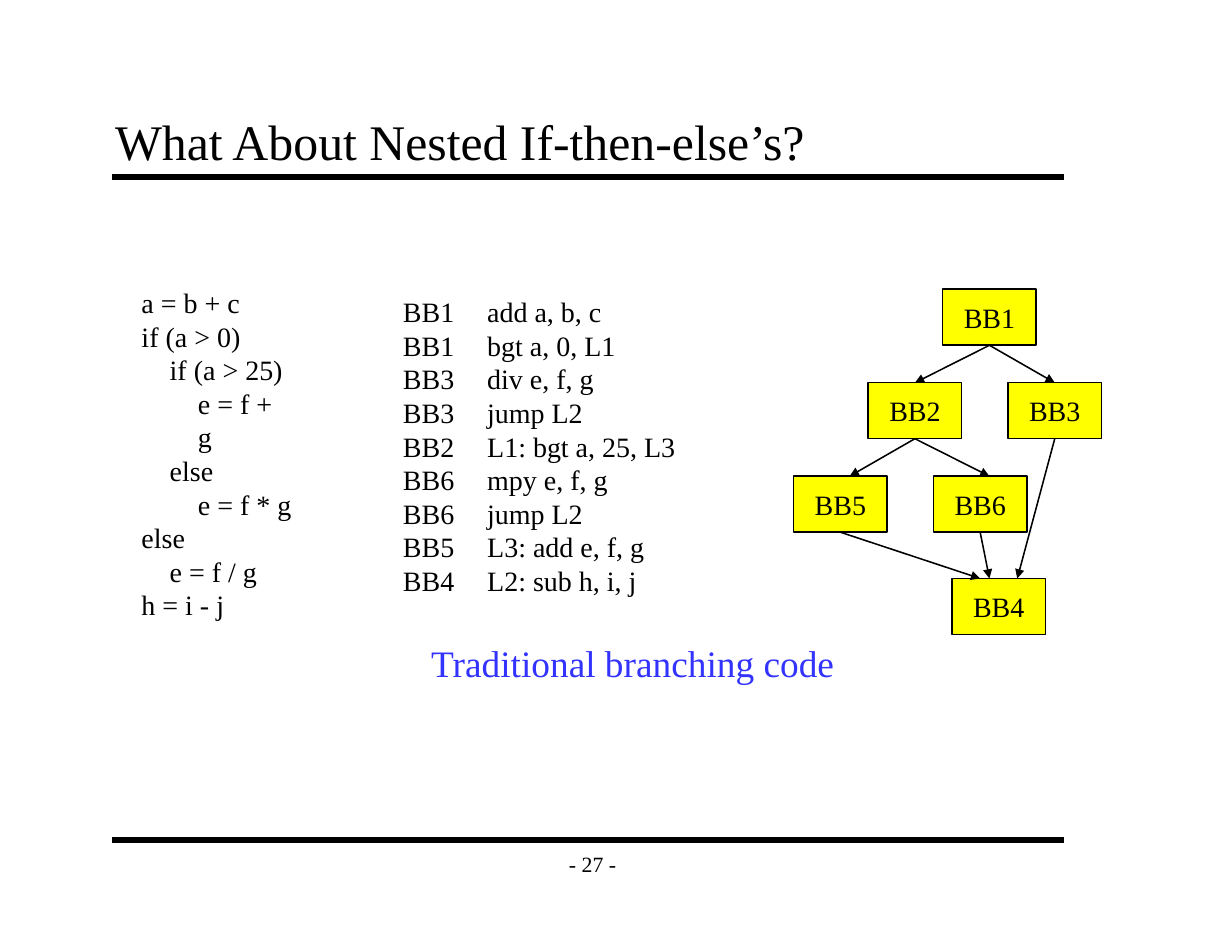
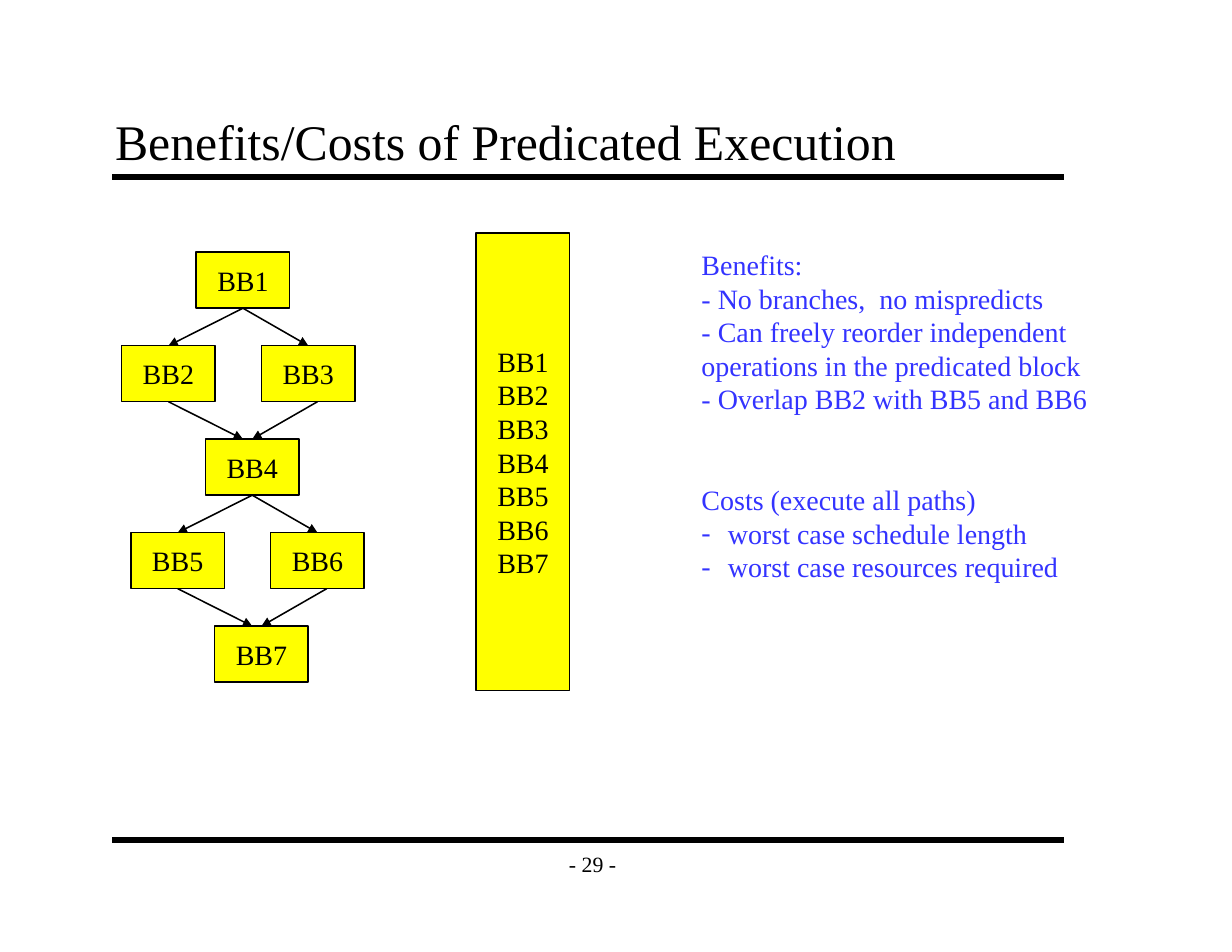
from dataclasses import dataclass

from lxml.etree import SubElement
from pptx import Presentation
from pptx.dml.color import RGBColor
from pptx.enum.shapes import MSO_CONNECTOR, MSO_SHAPE
from pptx.enum.text import MSO_ANCHOR, MSO_AUTO_SIZE, PP_ALIGN
from pptx.oxml.ns import qn
from pptx.util import Cm, Pt


@dataclass(frozen=True)
class Theme:
    font: str = "Times New Roman"
    ink: RGBColor = RGBColor(0, 0, 0)
    accent: RGBColor = RGBColor(0x33, 0x33, 0xFF)
    block: RGBColor = RGBColor(0xFF, 0xFF, 0)
    title: int = 32
    caption: int = 24
    body: int = 18
    footer: int = 14
    leading: float = 21.6
    rule: int = 4
    line: int = 1


@dataclass(frozen=True)
class Block:
    name: str
    x: float
    y: float


@dataclass(frozen=True)
class Edge:
    start: str
    end: str
    start_nudge: int = 0  # in steps of NUDGE from the middle of the block
    end_nudge: int = 0


@dataclass(frozen=True)
class Label:
    x: float
    y: float
    w: float
    h: float
    lines: list[str]
    size: int
    color: RGBColor
    wrap: bool = False


T = Theme()

# Flow graph grid, in centimetres
BLOCK_W, BLOCK_H = 2.12, 1.27
ROW = 2.12
LEFT, RIGHT = -1.69, 1.48  # shifts from a block to its two successors
NUDGE = 0.21
INDENT = 0.64


def style(tf, size: int, color: RGBColor, align: PP_ALIGN | None = None) -> None:
    for p in tf.paragraphs:
        p.alignment = align
        if size == T.body:
            p.line_spacing = Pt(T.leading)
        for r in p.runs:
            r.font.name, r.font.size = T.font, Pt(size)
            r.font.color.rgb = color


def add_label(s, label: Label):
    tf = s.shapes.add_textbox(Cm(label.x), Cm(label.y), Cm(label.w), Cm(label.h)).text_frame
    tf.text = "\n".join(label.lines)
    tf.word_wrap = label.wrap
    tf.auto_size = MSO_AUTO_SIZE.SHAPE_TO_FIT_TEXT
    style(tf, label.size, label.color)
    return tf


def add_line(s, x1: float, y1: float, x2: float, y2: float, width: int, arrow: bool = False) -> None:
    c = s.shapes.add_connector(MSO_CONNECTOR.STRAIGHT, Cm(x1), Cm(y1), Cm(x2), Cm(y2))
    c.line.color.rgb, c.line.width = T.ink, Pt(width)
    sp_pr = c._element.spPr
    if arrow:
        SubElement(sp_pr.find(qn("a:ln")), qn("a:tailEnd"), type="triangle")
    SubElement(sp_pr, qn("a:effectLst"))


def add_block(s, x: float, y: float, text: str, h: float = BLOCK_H) -> None:
    sp = s.shapes.add_shape(MSO_SHAPE.RECTANGLE, Cm(x), Cm(y), Cm(BLOCK_W), Cm(h))
    sp.shadow.inherit = False
    sp.fill.solid()
    sp.fill.fore_color.rgb = T.block
    sp.line.color.rgb, sp.line.width = T.ink, Pt(T.line)
    tf = sp.text_frame
    tf.text = text
    tf.word_wrap = False
    tf.vertical_anchor = MSO_ANCHOR.MIDDLE
    style(tf, T.body, T.ink, PP_ALIGN.CENTER)


def add_graph(s, blocks: list[Block], edges: list[Edge]) -> None:
    by_name = {b.name: b for b in blocks}
    for b in blocks:
        add_block(s, b.x, b.y, b.name)
    for e in edges:
        a, b = by_name[e.start], by_name[e.end]
        add_line(s, a.x + BLOCK_W / 2 + e.start_nudge * NUDGE, a.y + BLOCK_H,
                 b.x + BLOCK_W / 2 + e.end_nudge * NUDGE, b.y, T.line, arrow=True)


def fork(names: tuple[str, str, str], x: float, y: float) -> list[Block]:
    """A block and its two successors in the next row."""
    return [Block(names[0], x, y), Block(names[1], x + LEFT, y + ROW), Block(names[2], x + RIGHT, y + ROW)]


def add_frame_text(s, x: float, y: float, w: float, h: float, text: str, size: int,
                   anchor: MSO_ANCHOR, align: PP_ALIGN, wrap: bool) -> None:
    tf = s.shapes.add_textbox(Cm(x), Cm(y), Cm(w), Cm(h)).text_frame
    tf.text = text
    tf.word_wrap = wrap
    tf.vertical_anchor = anchor
    tf.margin_left = tf.margin_right = Cm(0.28)
    tf.margin_top = tf.margin_bottom = Cm(0.15)
    style(tf, size, T.ink, align)


def new_slide(prs, title: str, number: int):
    s = prs.slides.add_slide(prs.slide_layouts[6])
    for y in (4.02, 19.05):
        add_line(s, 2.54, y, 24.13, y, T.rule)
    add_frame_text(s, 12.49, 19.05, 1.9, 1.06, f"- {number} -", T.footer,
                   MSO_ANCHOR.MIDDLE, PP_ALIGN.CENTER, False)
    add_frame_text(s, 2.33, 2.33, 23.7, 1.69, title, T.title,
                   MSO_ANCHOR.BOTTOM, PP_ALIGN.LEFT, True)
    return s


def nested_slide(prs) -> None:
    s = new_slide(prs, "What About Nested If-then-else’s?", 27)

    # Source code, indented by nesting level
    source = [(0, "a = b + c"), (0, "if (a > 0)"), (1, "if (a > 25)"), (2, "e = f + g"), (1, "else"),
              (2, "e = f * g"), (0, "else"), (1, "e = f / g"), (0, "h = i - j")]
    tf = add_label(s, Label(2.96, 6.35, 3.94, 7.11, [line for _, line in source], T.body, T.ink))
    for p, (level, _) in zip(tf.paragraphs, source):
        p._p.get_or_add_pPr().set("marL", str(Cm(level * INDENT)))

    # Assembly with the block each instruction belongs to
    assembly = [("BB1", "add a, b, c"), ("BB1", "bgt a, 0, L1"), ("BB3", "div e, f, g"),
                ("BB3", "jump L2"), ("BB2", "L1: bgt a, 25, L3"), ("BB6", "mpy e, f, g"),
                ("BB6", "jump L2"), ("BB5", "L3: add e, f, g"), ("BB4", "L2: sub h, i, j")]
    names, code = zip(*assembly)
    add_label(s, Label(8.89, 6.56, 1.68, 7.11, names, T.body, T.ink))
    add_label(s, Label(10.8, 6.56, 4.78, 7.11, code, T.body, T.ink))
    add_label(s, Label(9.53, 14.39, 11.05, 1.27, ["Traditional branching code"], T.caption, T.accent, True))

    # Flow graph
    x, y = 21.38, 6.56
    blocks = fork(("BB1", "BB2", "BB3"), x, y)
    blocks += fork(("BB2", "BB5", "BB6"), x + LEFT, y + ROW)[1:]
    blocks.append(Block("BB4", 21.59, 13.12))
    add_graph(s, blocks, [
        Edge("BB1", "BB2"), Edge("BB1", "BB3"),
        Edge("BB2", "BB5", 0, 1), Edge("BB2", "BB6", 0, 1),
        Edge("BB5", "BB4", 0, -2), Edge("BB6", "BB4", 0, -1), Edge("BB3", "BB4", 0, 2)])


def benefits_slide(prs) -> None:
    s = new_slide(prs, "Benefits/Costs of Predicated Execution", 29)

    # Flow graph: two diamonds, each block row drifting right
    x, y = 4.45, 5.72
    blocks = fork(("BB1", "BB2", "BB3"), x, y)
    blocks += fork(("BB4", "BB5", "BB6"), x + NUDGE, y + 2 * ROW)
    blocks.append(Block("BB7", x + 2 * NUDGE, y + 4 * ROW))
    edges = []
    for top, left, right, bottom in (("BB1", "BB2", "BB3", "BB4"), ("BB4", "BB5", "BB6", "BB7")):
        edges += [Edge(top, left), Edge(top, right), Edge(left, bottom, 0, -1), Edge(right, bottom, 1)]
    add_graph(s, blocks, edges)

    # Single predicated block
    add_block(s, 10.8, 5.29, "\n".join(f"BB{i}" for i in range(1, 8)), 10.37)

    # Benefits and costs
    lines = ["Benefits:", "- No branches,  no mispredicts", "- Can freely reorder independent",
             "operations in the predicated block", "- Overlap BB2 with BB5 and BB6",
             "Costs (execute all paths)", "worst case schedule length", "worst case resources required"]
    tf = add_label(s, Label(15.66, 5.49, 9.27, 7.87, lines, T.body, T.accent))
    costs, *bullets = tf.paragraphs[5:]
    costs.space_before = Pt(2 * T.leading)
    for p in bullets:
        p_pr = p._p.get_or_add_pPr()
        p_pr.set("marL", str(Cm(0.6)))
        p_pr.set("indent", str(-Cm(0.6)))
        SubElement(p_pr, qn("a:buFont"), typeface=T.font)
        SubElement(p_pr, qn("a:buChar"), char="-")


def main() -> None:
    prs = Presentation()
    prs.slide_width, prs.slide_height = Cm(27.94), Cm(21.59)
    nested_slide(prs)
    benefits_slide(prs)
    prs.save("out.pptx")


if __name__ == "__main__":
    main()
